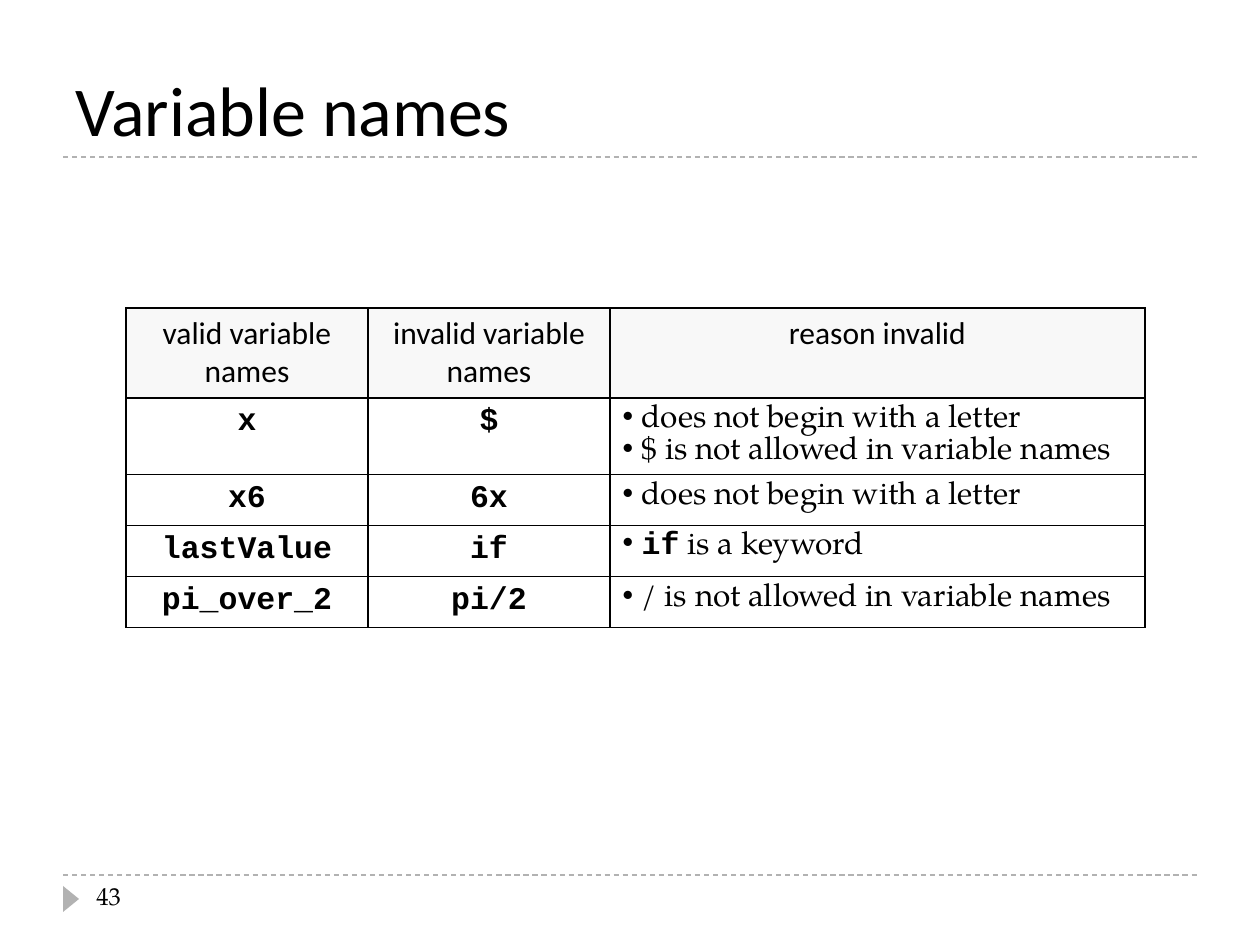
from lxml import etree
from pptx import Presentation
from pptx.dml.color import RGBColor
from pptx.enum.dml import MSO_LINE
from pptx.enum.shapes import MSO_CONNECTOR, MSO_SHAPE
from pptx.enum.text import MSO_ANCHOR, PP_ALIGN
from pptx.oxml.ns import qn
from pptx.util import Pt

STRAIGHT = MSO_CONNECTOR.STRAIGHT
TRIANGLE = MSO_SHAPE.ISOSCELES_TRIANGLE
DASH = MSO_LINE.DASH
BOTTOM = MSO_ANCHOR.BOTTOM
LEFT, CENTER = PP_ALIGN.LEFT, PP_ALIGN.CENTER
SANS, SERIF, MONO = "Calibri", "TeX Gyre Pagella", "Courier New"
BLACK, WHITE, GRAY, PALE = "000000", "FFFFFF", "B2B2B2", "F8F8F8"

HEADERS = ["valid variable names", "invalid variable names", "reason invalid"]
ROWS = [
    ("x", "$", [[(" does not begin with a letter", SERIF)],
                [(" $ is not allowed in variable names", SERIF)]]),
    ("x6", "6x", [[(" does not begin with a letter", SERIF)]]),
    ("lastValue", "if", [[(" ", SERIF), ("if", MONO), (" is a keyword", SERIF)]]),
    ("pi_over_2", "pi/2", [[(" / is not allowed in variable names", SERIF)]]),
]
COL_WIDTHS = [242, 242, 535]
ROW_HEIGHTS = [90, 76, 51, 51, 51]


def px(n):
    """Turn pixels into EMU."""
    return round(n * 914400 / 126)


def rgb(color):
    """Turn a hex string into a colour."""
    return RGBColor.from_string(color)


def add_run(p, text, font, size):
    """Add a black run; code is bold."""
    r = p.add_run()
    r.text = text
    r.font.name = font
    r.font.size = Pt(size)
    r.font.bold = font == MONO
    r.font.color.rgb = rgb(BLACK)


def add_rule(slide, x, y, w):
    """Draw a dashed horizontal rule."""
    line = slide.shapes.add_connector(STRAIGHT, px(x), px(y), px(x + w), px(y))
    line.line.color.rgb = rgb(GRAY)
    line.line.width = Pt(0.75)
    line.line.dash_style = DASH
    etree.SubElement(line._element.spPr, qn("a:effectLst"))


def add_title(slide, x, y, w, h, text):
    """Place the title above its rule."""
    sp = slide.shapes.title
    sp.left, sp.top, sp.width, sp.height = px(x), px(y), px(w), px(h)
    tf = sp.text_frame
    tf.vertical_anchor = BOTTOM
    p = tf.paragraphs[0]
    p.alignment = LEFT
    add_run(p, text, SANS, 40)
    add_rule(slide, x, y + h, w)


def add_footer(slide, x, y, w, number):
    """Place the footer rule, marker and slide number."""
    add_rule(slide, x, y, w)
    sp = slide.shapes.add_shape(TRIANGLE, px(x - 5), px(y + 16), px(26), px(16))
    sp.rotation = 90
    sp.shadow.inherit = False
    sp.fill.solid()
    sp.fill.fore_color.rgb = rgb(GRAY)
    sp.line.fill.background()
    tf = slide.shapes.add_textbox(px(x + 21), px(y), px(273), px(50)).text_frame
    tf.word_wrap = True
    add_run(tf.paragraphs[0], number, SERIF, 14)


def style_cell(cell, fill):
    """Give a cell black borders and a solid fill."""
    tcPr = cell._tc.get_or_add_tcPr()
    for side in ("lnL", "lnR", "lnT", "lnB"):
        ln = etree.SubElement(tcPr, qn(f"a:{side}"), w=str(Pt(1)))
        solid = etree.SubElement(ln, qn("a:solidFill"))
        etree.SubElement(solid, qn("a:srgbClr"), val=BLACK)
    cell.fill.solid()
    cell.fill.fore_color.rgb = rgb(fill)


def fill_centered(cell, text, font):
    """Write one centred line in a cell."""
    p = cell.text_frame.paragraphs[0]
    p.alignment = CENTER
    add_run(p, text, font, 18)


def fill_bullets(cell, items):
    """Write tightly spaced bullets in a cell."""
    tf = cell.text_frame
    for i, runs in enumerate(items):
        p = tf.add_paragraph() if i else tf.paragraphs[0]
        p.line_spacing = Pt(18.3)
        etree.SubElement(p._p.get_or_add_pPr(), qn("a:buChar"), char="•")
        for text, font in runs:
            add_run(p, text, font, 18)


def add_names_table(slide, x, y):
    """Place the table of valid and invalid names."""
    frame = slide.shapes.add_table(len(ROW_HEIGHTS), len(COL_WIDTHS), px(x), px(y),
                                   px(sum(COL_WIDTHS)), px(sum(ROW_HEIGHTS)))
    table = frame.table
    for col, w in zip(table.columns, COL_WIDTHS):
        col.width = px(w)
    for row, h in zip(table.rows, ROW_HEIGHTS):
        row.height = px(h)
    for c, text in enumerate(HEADERS):
        style_cell(table.cell(0, c), PALE)
        fill_centered(table.cell(0, c), text, SANS)
    for r, (valid, invalid, reasons) in enumerate(ROWS, 1):
        for c in range(len(COL_WIDTHS)):
            style_cell(table.cell(r, c), WHITE)
        fill_centered(table.cell(r, 0), valid, MONO)
        fill_centered(table.cell(r, 1), invalid, MONO)
        fill_bullets(table.cell(r, 2), reasons)


def main():
    """Build and save the slide."""
    prs = Presentation()
    prs.slide_width, prs.slide_height = px(1260), px(945)
    slide = prs.slides.add_slide(prs.slide_layouts[5])
    add_title(slide, 63, 21, 1134, 136, "Variable names")
    add_names_table(slide, 126, 308)
    add_footer(slide, 63, 875, 1134, "43")
    prs.save("out.pptx")


if __name__ == "__main__":
    main()
